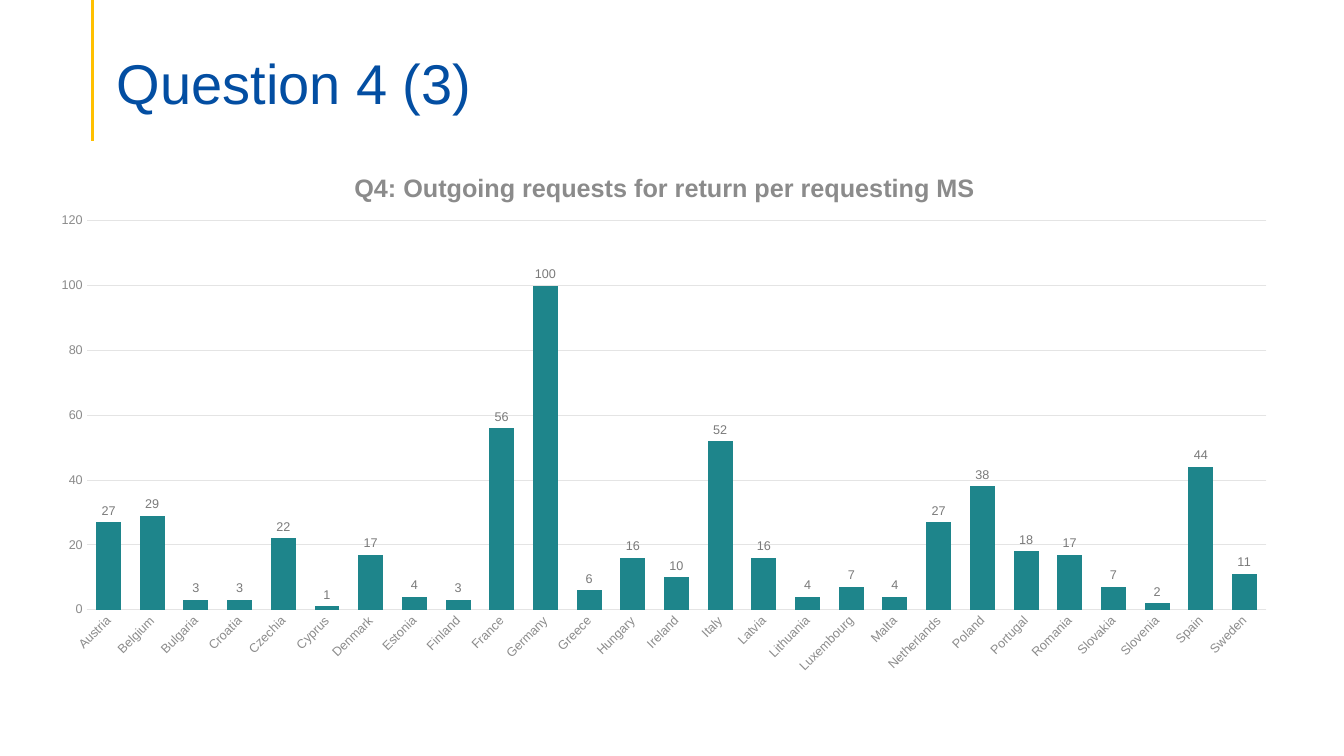
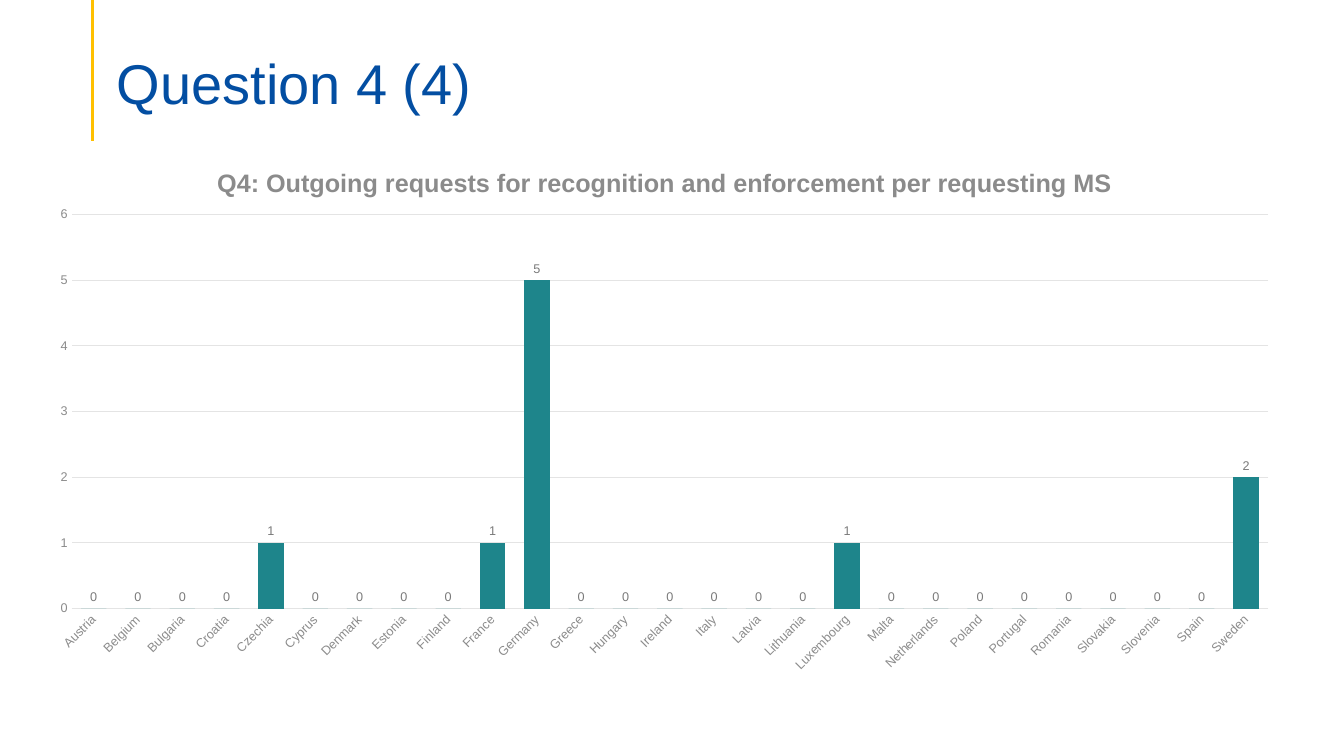
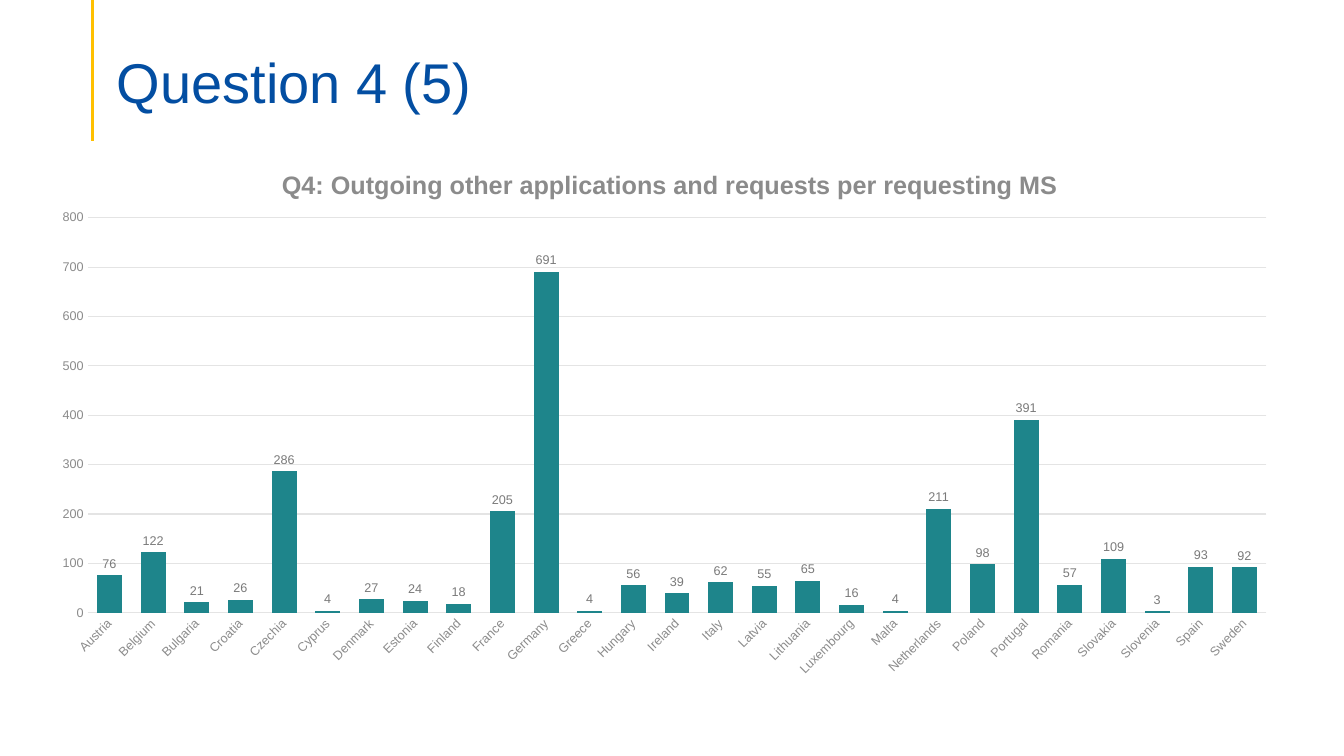
from dataclasses import dataclass

import pptx
import pptx.chart.data
import pptx.dml.color
import pptx.enum.chart
import pptx.enum.shapes
import pptx.enum.text
import pptx.oxml
import pptx.oxml.ns
import pptx.util
from pptx.util import Inches, Pt

RGBColor = pptx.dml.color.RGBColor
BLUE = RGBColor(0x03, 0x4E, 0xA2)
YELLOW = RGBColor(0xFF, 0xC0, 0x00)
TEAL = RGBColor(0x1E, 0x85, 0x8B)
GREY = RGBColor(0x8B, 0x8B, 0x8B)
LABEL_GREY = RGBColor(0x7A, 0x7A, 0x7A)
DARK_GREY = RGBColor(0x4D, 0x4D, 0x4D)
GRID_GREY = RGBColor(0xE4, 0xE4, 0xE4)
FONT = "Arial"

COUNTRIES = (
    "Austria", "Belgium", "Bulgaria", "Croatia", "Czechia", "Cyprus", "Denmark",
    "Estonia", "Finland", "France", "Germany", "Greece", "Hungary", "Ireland",
    "Italy", "Latvia", "Lithuania", "Luxembourg", "Malta", "Netherlands", "Poland",
    "Portugal", "Romania", "Slovakia", "Slovenia", "Spain", "Sweden",
)


@dataclass(frozen=True)
class Box:
    """A rectangle on the slide, in inches."""
    left: float
    top: float
    width: float = 0
    height: float = 0


@dataclass(frozen=True)
class ChartSlide:
    title: str
    chart_title: str
    values: tuple[int, ...]
    axis_max: int
    axis_step: int
    frame: Box
    heading: Box
    plot: Box


SLIDES = (
    ChartSlide(
        "Question 4 (3)", "Q4: Outgoing requests for return per requesting MS",
        (27, 29, 3, 3, 22, 1, 17, 4, 3, 56, 100, 6, 16, 10, 52, 16, 4, 7, 4, 27,
         38, 18, 17, 7, 2, 44, 11),
        120, 20, Box(0.37, 1.42, 12.44, 5.38), Box(3.47, 1.65),
        Box(0.86, 2.19, 11.7, 3.86)),
    ChartSlide(
        "Question 4 (4)",
        "Q4: Outgoing requests for recognition and enforcement per requesting MS",
        (0, 0, 0, 0, 1, 0, 0, 0, 0, 1, 5, 0, 0, 0, 0, 0, 0, 1, 0, 0,
         0, 0, 0, 0, 0, 0, 2),
        6, 1, Box(0.36, 1.41, 12.48, 5.38), Box(2.11, 1.61),
        Box(0.71, 2.13, 11.87, 3.91)),
    ChartSlide(
        "Question 4 (5)",
        "Q4: Outgoing other applications and requests per requesting MS",
        (76, 122, 21, 26, 286, 4, 27, 24, 18, 205, 691, 4, 56, 39, 62, 55, 65, 16,
         4, 211, 98, 391, 57, 109, 3, 93, 92),
        800, 100, Box(0.38, 1.39, 12.43, 5.43), Box(2.75, 1.62),
        Box(0.87, 2.16, 11.69, 3.92)),
)


def set_font(font, size: float, color: RGBColor, bold: bool = False) -> None:
    font.name = FONT
    font.size = Pt(size)
    font.bold = bold
    font.color.rgb = color


def add_title(s, text: str, bottom: float) -> None:
    """Draw the yellow rule and the slide title, which ends where the chart starts."""
    rule = s.shapes.add_connector(
        pptx.enum.shapes.MSO_CONNECTOR.STRAIGHT,
        Inches(0.92), 0, Inches(0.92), Inches(1.4))
    rule.line.color.rgb = YELLOW
    rule.line.width = Pt(2.25)
    rule.element.spPr.append(pptx.oxml.parse_xml(
        f"<a:effectLst {pptx.oxml.ns.nsdecls('a')}/>"))

    top = 0.25
    sp = s.shapes.add_textbox(Inches(1.06), Inches(top), Inches(11.5),
                              Inches(bottom - top))
    tf = sp.text_frame
    tf.word_wrap = True
    tf.vertical_anchor = pptx.enum.text.MSO_ANCHOR.MIDDLE
    tf.margin_bottom = 0
    p = tf.paragraphs[0]
    p.text = text
    p.line_spacing = 0.9
    set_font(p.runs[0].font, 40, BLUE)


def place(parent, index: int, box: Box, frame: Box) -> None:
    """Fix a chart part at box, as shares of the chart frame."""
    for old in parent.xpath("c:layout"):
        parent.remove(old)
    shares = {"x": (box.left - frame.left) / frame.width,
              "y": (box.top - frame.top) / frame.height}
    target = ""
    if box.width:
        target = '<c:layoutTarget val="inner"/>'
        shares |= {"w": box.width / frame.width, "h": box.height / frame.height}
    modes = "".join(f'<c:{k}Mode val="edge"/>' for k in "xy")
    sizes = "".join(f'<c:{k} val="{v:.4f}"/>' for k, v in shares.items())
    parent.insert(index, pptx.oxml.parse_xml(
        f"<c:layout {pptx.oxml.ns.nsdecls('c')}><c:manualLayout>"
        f"{target}{modes}{sizes}</c:manualLayout></c:layout>"))


def style_axes(chart, spec_max: int, step: int) -> None:
    categories, values = chart.category_axis, chart.value_axis
    for axis in (categories, values):
        axis.major_tick_mark = pptx.enum.chart.XL_TICK_MARK.NONE
        axis.minor_tick_mark = pptx.enum.chart.XL_TICK_MARK.NONE
        set_font(axis.tick_labels.font, 9, GREY)
    for line in (categories.format.line, values.major_gridlines.format.line):
        line.color.rgb = GRID_GREY
        line.width = Pt(0.75)
    for body in chart.element.xpath(".//c:catAx/c:txPr/a:bodyPr"):
        body.set("rot", str(-45 * 60000))
    values.format.line.fill.background()
    values.minimum_scale = 0
    values.maximum_scale = spec_max
    values.major_unit = step


def add_column_chart(s, item: ChartSlide) -> None:
    data = pptx.chart.data.CategoryChartData()
    data.categories = COUNTRIES
    data.add_series("Series 1", item.values)
    frame = item.frame
    chart = s.shapes.add_chart(
        pptx.enum.chart.XL_CHART_TYPE.COLUMN_CLUSTERED,
        Inches(frame.left), Inches(frame.top),
        Inches(frame.width), Inches(frame.height), data).chart
    set_font(chart.font, 10, DARK_GREY)
    chart.has_legend = False
    chart.has_title = True
    p = chart.chart_title.text_frame.paragraphs[0]
    p.text = item.chart_title
    set_font(p.runs[0].font, 18, GREY, bold=True)
    chart.chart_title.include_in_layout = False
    style_axes(chart, item.axis_max, item.axis_step)

    plot = chart.plots[0]
    plot.vary_by_categories = False
    plot.gap_width = 75
    plot.overlap = 40
    fill = plot.series[0].format.fill
    fill.solid()
    fill.fore_color.rgb = TEAL
    plot.has_data_labels = True
    labels = plot.data_labels
    labels.show_value = True
    labels.position = pptx.enum.chart.XL_LABEL_POSITION.OUTSIDE_END
    set_font(labels.font, 9, LABEL_GREY)

    place(chart.element.xpath("c:chart/c:title")[0], 1, item.heading, frame)
    place(chart.element.xpath("c:chart/c:plotArea")[0], 0, item.plot, frame)


def main() -> None:
    prs = pptx.Presentation()
    prs.slide_width = Inches(13.33)
    prs.slide_height = Inches(7.5)
    for item in SLIDES:
        s = prs.slides.add_slide(prs.slide_layouts[6])
        add_title(s, item.title, item.frame.top)
        add_column_chart(s, item)
    prs.save("out.pptx")


if __name__ == "__main__":
    main()
